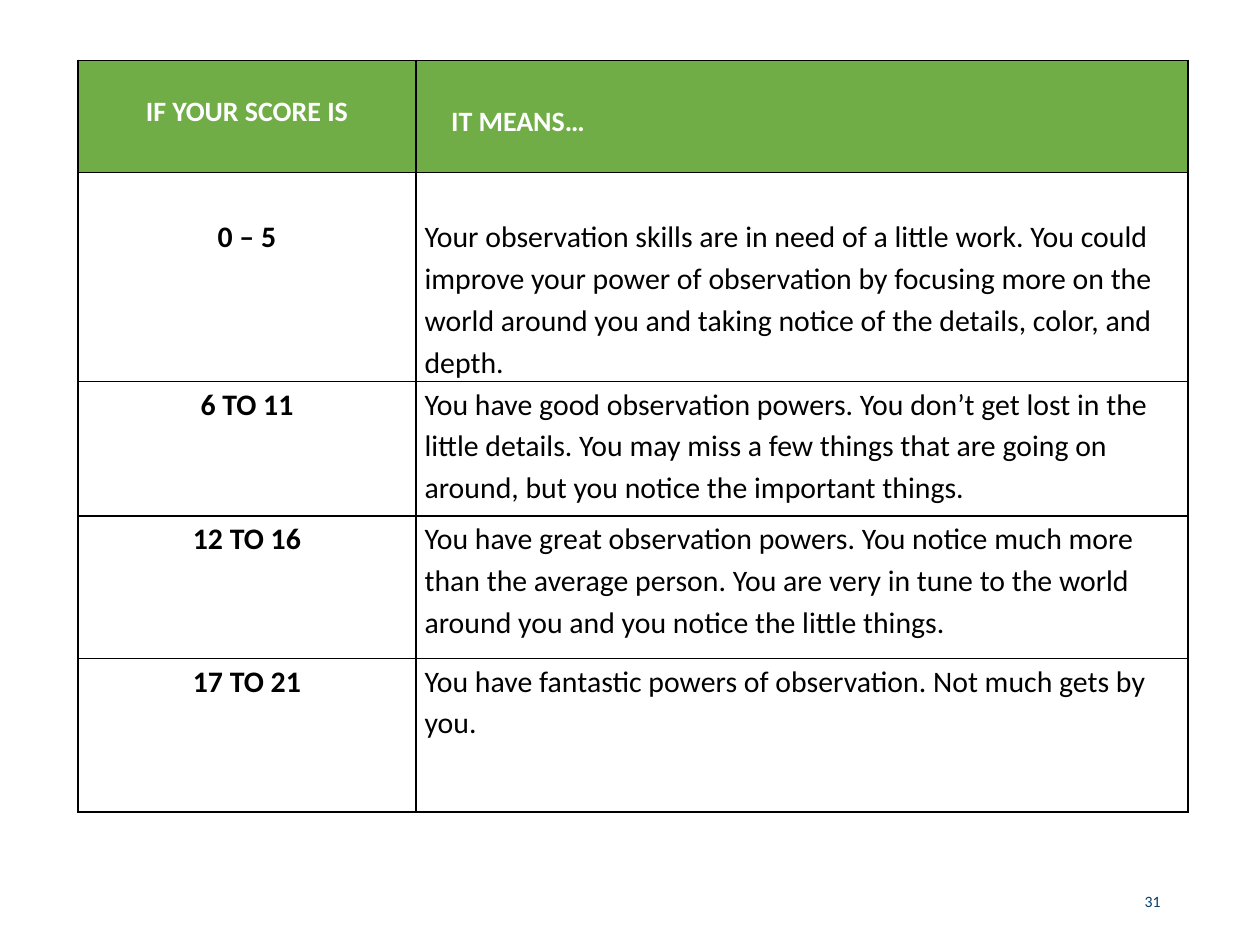
from lxml import etree
from pptx import Presentation
from pptx.dml.color import RGBColor
from pptx.enum.text import MSO_ANCHOR, PP_ALIGN
from pptx.oxml.ns import qn
from pptx.util import Inches, Pt

CENTER, LEFT, RIGHT = PP_ALIGN.CENTER, PP_ALIGN.LEFT, PP_ALIGN.RIGHT
MIDDLE = MSO_ANCHOR.MIDDLE
GREEN, WHITE, BLACK, NAVY = "70AD47", "FFFFFF", "000000", "003E6C"

COLUMNS = [2.68, 6.13]
ROWS = [0.89, 1.6, 1.07, 1.13, 1.22]
SCORES = [
    ("0 – 5", "Your observation skills are in need of a little work. You could "
     "improve your power of observation by focusing more on the world around "
     "you and taking notice of the details, color, and depth."),
    ("6 TO 11", "You have good observation powers. You don’t get lost in the "
     "little details. You may miss a few things that are going on around, but "
     "you notice the important things."),
    ("12 TO 16", "You have great observation powers. You notice much more than "
     "the average person. You are very in tune to the world around you and "
     "you notice the little things."),
    ("17 TO 21", "You have fantastic powers of observation. Not much gets by "
     "you."),
]


def rgb(value):
    return RGBColor.from_string(value)


class SlideBuilder:
    font = "Calibri"
    pad = 0.07

    def __init__(self, slide):
        self.s = slide

    def add_text(self, tf, text, size, color, bold=False, align=LEFT, spacing=None):
        p = tf.paragraphs[0]
        p.alignment = align
        if spacing:
            p.line_spacing = spacing
        r = p.add_run()
        r.text = text
        r.font.name = self.font
        r.font.size = Pt(size)
        r.font.bold = bold
        r.font.color.rgb = rgb(color)

    def text_box(self, x, y, w, h, text, size, color, align):
        sp = self.s.shapes.add_textbox(Inches(x), Inches(y), Inches(w), Inches(h))
        tf = sp.text_frame
        tf.word_wrap = True
        tf.vertical_anchor = MIDDLE
        self.add_text(tf, text, size, color, align=align)

    def table(self, x, y, columns, rows):
        tbl = self.s.shapes.add_table(
            len(rows), len(columns), Inches(x), Inches(y),
            Inches(sum(columns)), Inches(sum(rows))).table
        for col, width in zip(tbl.columns, columns):
            col.width = Inches(width)
        for row, height in zip(tbl.rows, rows):
            row.height = Inches(height)
        return tbl

    def cell(self, cell, text, size, color, fill=None, top=0, left=pad, **style):
        cell.margin_left, cell.margin_right = Inches(left), Inches(self.pad)
        cell.margin_top, cell.margin_bottom = Inches(top), 0
        self.borders(cell)
        if fill:
            cell.fill.solid()
            cell.fill.fore_color.rgb = rgb(fill)
        else:
            cell.fill.background()
        self.add_text(cell.text_frame, text, size, color, **style)

    def borders(self, cell):
        tc_pr = cell._tc.get_or_add_tcPr()
        for side in ("a:lnL", "a:lnR", "a:lnT", "a:lnB"):
            ln = etree.SubElement(tc_pr, qn(side), w=str(Pt(1)))
            fill = etree.SubElement(ln, qn("a:solidFill"))
            etree.SubElement(fill, qn("a:srgbClr"), val=BLACK)


def main():
    prs = Presentation()
    prs.slide_width, prs.slide_height = Inches(10), Inches(7.5)
    b = SlideBuilder(prs.slides.add_slide(prs.slide_layouts[6]))

    # Score table: header
    tbl = b.table(0.62, 0.48, COLUMNS, ROWS)
    b.cell(tbl.cell(0, 0), "IF YOUR SCORE IS", 16, WHITE, GREEN, top=0.27,
           bold=True, align=CENTER)
    b.cell(tbl.cell(0, 1), "IT MEANS…", 16, WHITE, GREEN, top=0.31, left=0.28,
           bold=True, spacing=1.15)

    # Score table: one row per score range, the first one set lower
    for i, (score, meaning) in enumerate(SCORES, start=1):
        top = 0.33 if i == 1 else 0
        b.cell(tbl.cell(i, 0), score, 17, BLACK, top=top, bold=True,
               align=CENTER, spacing=1.15)
        b.cell(tbl.cell(i, 1), meaning, 17, BLACK, top=top, spacing=1.15)

    # Page number
    b.text_box(7.06, 6.95, 2.25, 0.4, "31", 9, NAVY, RIGHT)

    prs.save("out.pptx")


if __name__ == "__main__":
    main()
